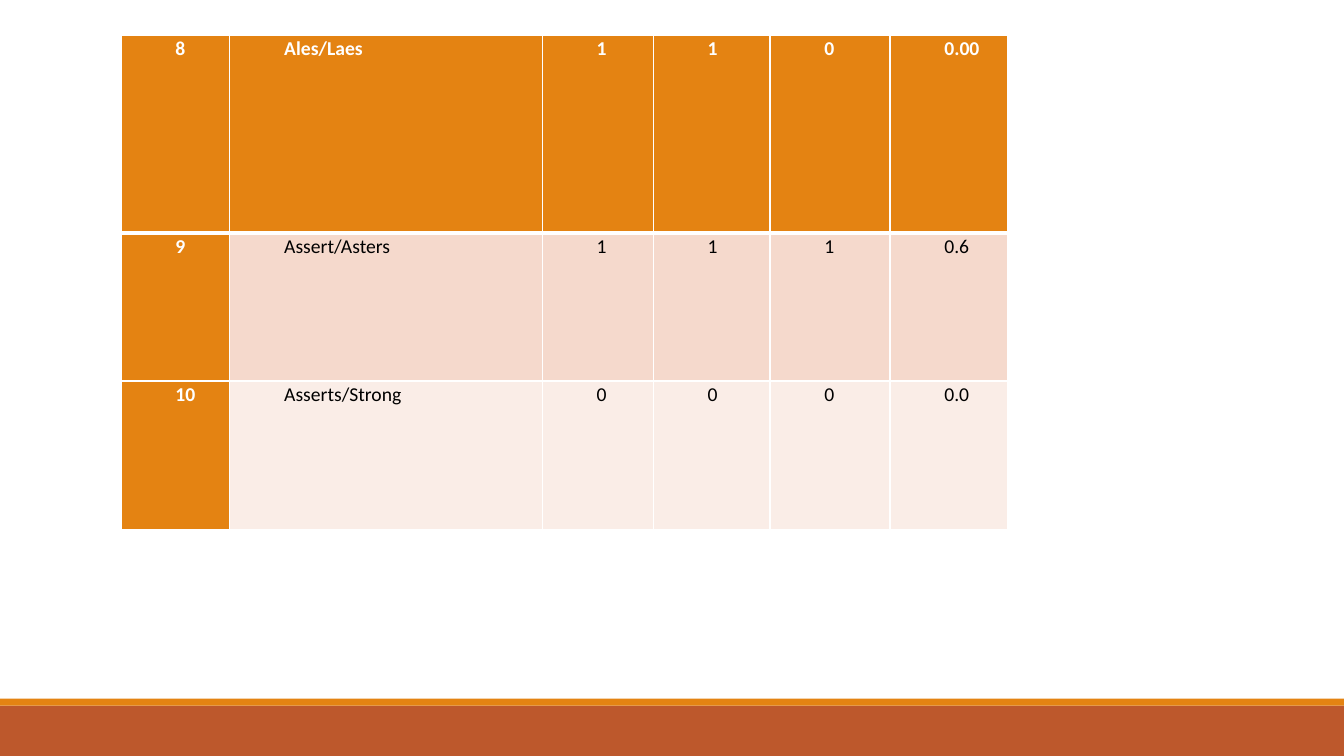
from lxml.etree import SubElement
from pptx import Presentation
from pptx.dml.color import RGBColor
from pptx.enum.shapes import MSO_SHAPE as Preset
from pptx.enum.text import PP_ALIGN as Align
from pptx.oxml.ns import qn
from pptx.util import Inches, Pt

WHITE = RGBColor(0xFF, 0xFF, 0xFF)
BLACK = RGBColor(0x00, 0x00, 0x00)
ORANGE = RGBColor(0xE4, 0x83, 0x12)
RUST = RGBColor(0xBD, 0x58, 0x2C)
BAND_DARK = RGBColor(0xF5, 0xD9, 0xCC)
BAND_LIGHT = RGBColor(0xFA, 0xED, 0xE7)

WORD_PAIRS = [
    ("8", "Ales/Laes", "1", "1", "0", "0.00"),
    ("9", "Assert/Asters", "1", "1", "1", "0.6"),
    ("10", "Asserts/Strong", "0", "0", "0", "0.0"),
]
COLUMN_SHARES = (8.1, 23.25, 8.25, 8.7, 8.92, 8.78)
ROW_SHARES = (26.13, 19.6, 19.6)


def write(frame, text, font="Calibri", size=14, color=BLACK, bold=False,
          align=Align.JUSTIFY, indent=0.5, spacing=1.07):
    paragraph = frame.paragraphs[0]
    paragraph.alignment = align
    paragraph.line_spacing = spacing
    properties = paragraph._p.get_or_add_pPr()
    properties.set("marL", str(Inches(indent)))
    properties.set("indent", "0")
    run = paragraph.add_run()
    run.text = text
    run.font.name = font
    run.font.size = Pt(size)
    run.font.color.rgb = color
    run.font.bold = bold


def draw_border(cell, side, width, color=WHITE):
    line = SubElement(cell._tc.get_or_add_tcPr(), qn(f"a:ln{side}"), w=str(Pt(width)))
    fill = SubElement(line, qn("a:solidFill"))
    SubElement(fill, qn("a:srgbClr"), val=str(color))


class SlideBuilder:
    def __init__(self, deck):
        self.deck = deck
        self.slide = deck.slides.add_slide(deck.slide_layouts[6])

    def across(self, share):
        return round(self.deck.slide_width * share / 100)

    def down(self, share):
        return round(self.deck.slide_height * share / 100)

    def bar(self, top, height, color):
        band = self.slide.shapes.add_shape(
            Preset.RECTANGLE, 0, self.down(top), self.across(100), self.down(height))
        band.shadow.inherit = False
        band.fill.solid()
        band.fill.fore_color.rgb = color
        band.line.fill.background()

    def table(self, left, top, rows, column_shares, row_shares):
        grid = self.slide.shapes.add_table(
            len(rows), len(column_shares), self.across(left), self.down(top),
            self.across(sum(column_shares)), self.down(sum(row_shares))).table
        grid.first_col = True
        for column, share in zip(grid.columns, column_shares):
            column.width = self.across(share)
        for row, share in zip(grid.rows, row_shares):
            row.height = self.down(share)
        for r, values in enumerate(rows):
            for c, value in enumerate(values):
                self.cell(grid.cell(r, c), value, r, c)

    def cell(self, cell, value, row, column):
        heading = row == 0 or column == 0
        cell.margin_left = cell.margin_right = Inches(0.04)
        cell.margin_top = cell.margin_bottom = 0
        draw_border(cell, "L", 1)
        draw_border(cell, "R", 1)
        draw_border(cell, "T", 3 if row == 1 else 1)
        draw_border(cell, "B", 3 if row == 0 else 1)
        cell.fill.solid()
        band = BAND_DARK if row % 2 else BAND_LIGHT
        cell.fill.fore_color.rgb = ORANGE if heading else band
        write(cell.text_frame, value, color=WHITE if heading else BLACK, bold=heading)


def main():
    deck = Presentation()
    deck.slide_width, deck.slide_height = Inches(13.33), Inches(7.5)
    builder = SlideBuilder(deck)
    builder.bar(93.33, 6.67, RUST)
    builder.bar(92.4, 0.93, ORANGE)
    builder.table(9, 4.67, WORD_PAIRS, COLUMN_SHARES, ROW_SHARES)
    deck.save("out.pptx")


if __name__ == "__main__":
    main()
